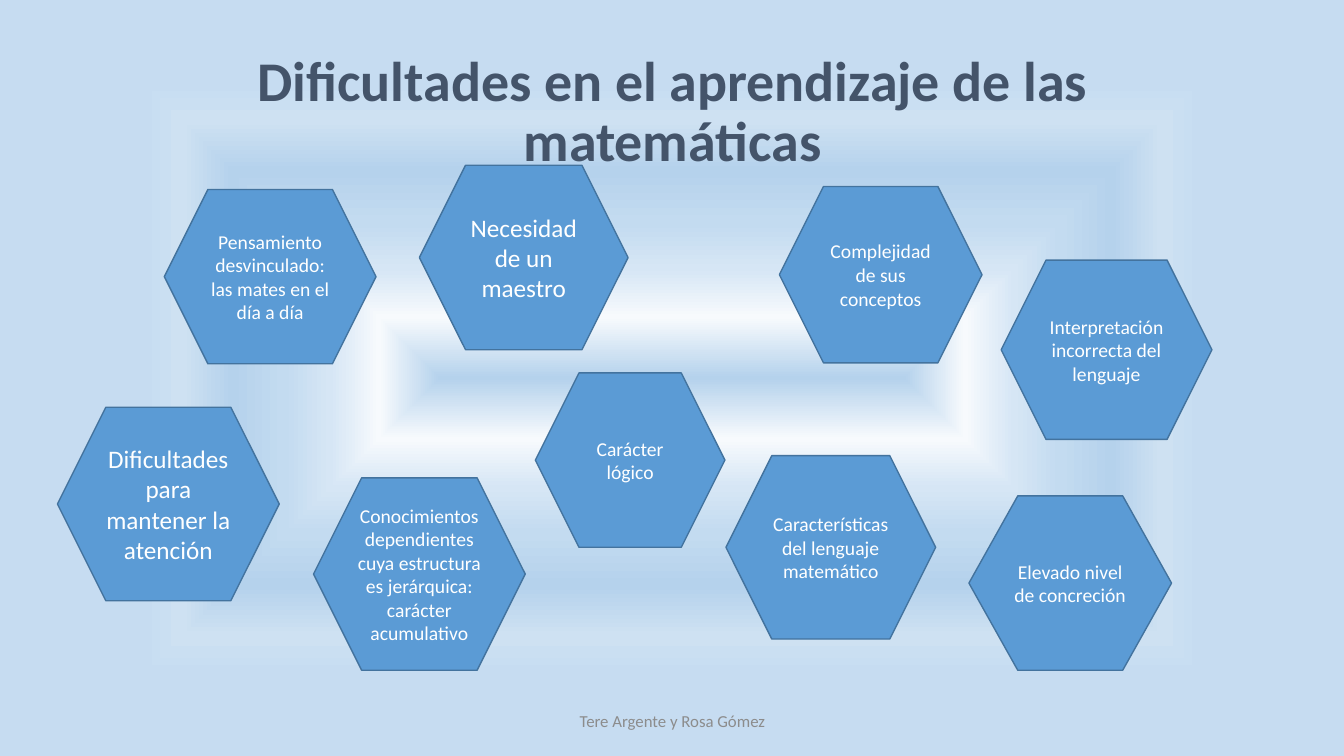
from lxml import etree
from pptx import Presentation
from pptx import util as u
from pptx.dml import color
from pptx.enum import shapes, text
from pptx.oxml import ns

FONT = "Calibri"

BACKDROP_STOPS = [
    (0, "B5D2EC"), (16, "F7FAFD"), (29, "D6E6F5"),
    (41, "C3DBF0"), (55, "B5D2EC"), (68, "CEE1F2"),
    (74, "CADFF2"), (76, "C8DEF2"), (79, "C6DCF1"),
]

DIFFICULTIES = [
    ("Pensamiento desvinculado: las mates en el día a día", 1.63, 1.88, 2.1, 1.73, 14),
    ("Carácter lógico", 5.31, 3.7, 1.88, 1.73, 14),
    ("Complejidad de sus conceptos", 7.73, 1.85, 2.01, 1.75, 14),
    ("Elevado nivel de concreción", 9.61, 4.92, 2.01, 1.73, 14),
    ("Conocimientos dependientes cuya estructura es jerárquica: carácter acumulativo",
     3.11, 4.74, 2.1, 1.91, 14),
    ("Características del lenguaje matemático", 7.2, 4.52, 2.08, 1.82, 14),
    ("Interpretación incorrecta del lenguaje", 9.93, 2.58, 2.09, 1.78, 14),
    ("Dificultades para mantener la atención", 0.57, 4.04, 2.2, 1.92, 18),
    ("Necesidad de un maestro", 4.16, 1.64, 2.07, 1.83, 18),
]


def paint(color_format, value):
    color_format.rgb = color.RGBColor.from_string(value)


def write(frame, wording, size, tint, bold=False):
    frame.word_wrap = True
    frame.auto_size = text.MSO_AUTO_SIZE.NONE
    frame.vertical_anchor = text.MSO_ANCHOR.MIDDLE
    paragraph = frame.paragraphs[0]
    paragraph.text = wording
    paragraph.alignment = text.PP_ALIGN.CENTER
    paragraph.font.name = FONT
    paragraph.font.size = u.Pt(size)
    paragraph.font.bold = bold
    paint(paragraph.font.color, tint)
    return paragraph


def add_backdrop(slide):
    slide.background.fill.gradient()
    gradient = slide.element.find(".//" + ns.qn("a:gradFill"))
    for child in list(gradient):
        gradient.remove(child)
    stops = etree.SubElement(gradient, ns.qn("a:gsLst"))
    for percent, tint in BACKDROP_STOPS:
        stop = etree.SubElement(stops, ns.qn("a:gs"), pos=str(percent * 1000))
        etree.SubElement(stop, ns.qn("a:srgbClr"), val=tint)
    spread = etree.SubElement(gradient, ns.qn("a:path"))
    spread.set("path", "shape")
    center = etree.SubElement(spread, ns.qn("a:fillToRect"))
    for side in "ltrb":
        center.set(side, "50000")


def add_title(slide, wording):
    title = slide.shapes.title
    title.left, title.top = u.Inches(0.92), u.Inches(0.4)
    title.width, title.height = u.Inches(11.5), u.Inches(1.45)
    write(title.text_frame, wording, 40, "44546A", bold=True).line_spacing = 0.9


def add_authors(slide, wording):
    authors = slide.shapes.add_textbox(
        u.Inches(4.42), u.Inches(6.95), u.Inches(4.5), u.Inches(0.4))
    write(authors.text_frame, wording, 12, "8C8C8C")


def add_difficulty(slide, wording, left, top, width, height, size):
    hexagon = slide.shapes.add_shape(
        shapes.MSO_SHAPE.HEXAGON,
        u.Inches(left), u.Inches(top), u.Inches(width), u.Inches(height))
    hexagon.shadow.inherit = False
    hexagon.fill.solid()
    paint(hexagon.fill.fore_color, "5B9BD5")
    paint(hexagon.line.color, "43739E")
    hexagon.line.width = u.Pt(1)
    write(hexagon.text_frame, wording, size, "FFFFFF")
    return hexagon


def main():
    deck = Presentation()
    deck.slide_width, deck.slide_height = u.Inches(13.33), u.Inches(7.5)
    slide = deck.slides.add_slide(deck.slide_layouts.get_by_name("Title Only"))
    add_backdrop(slide)
    add_title(slide, "Dificultades en el aprendizaje de las matemáticas")
    add_authors(slide, "Tere Argente y Rosa Gómez")
    for difficulty in DIFFICULTIES:
        hexagon = add_difficulty(slide, *difficulty)
        if difficulty[0].startswith("Elevado"):
            hexagon.adjustments[0] = 0.28
    deck.save("out.pptx")


if __name__ == "__main__":
    main()
